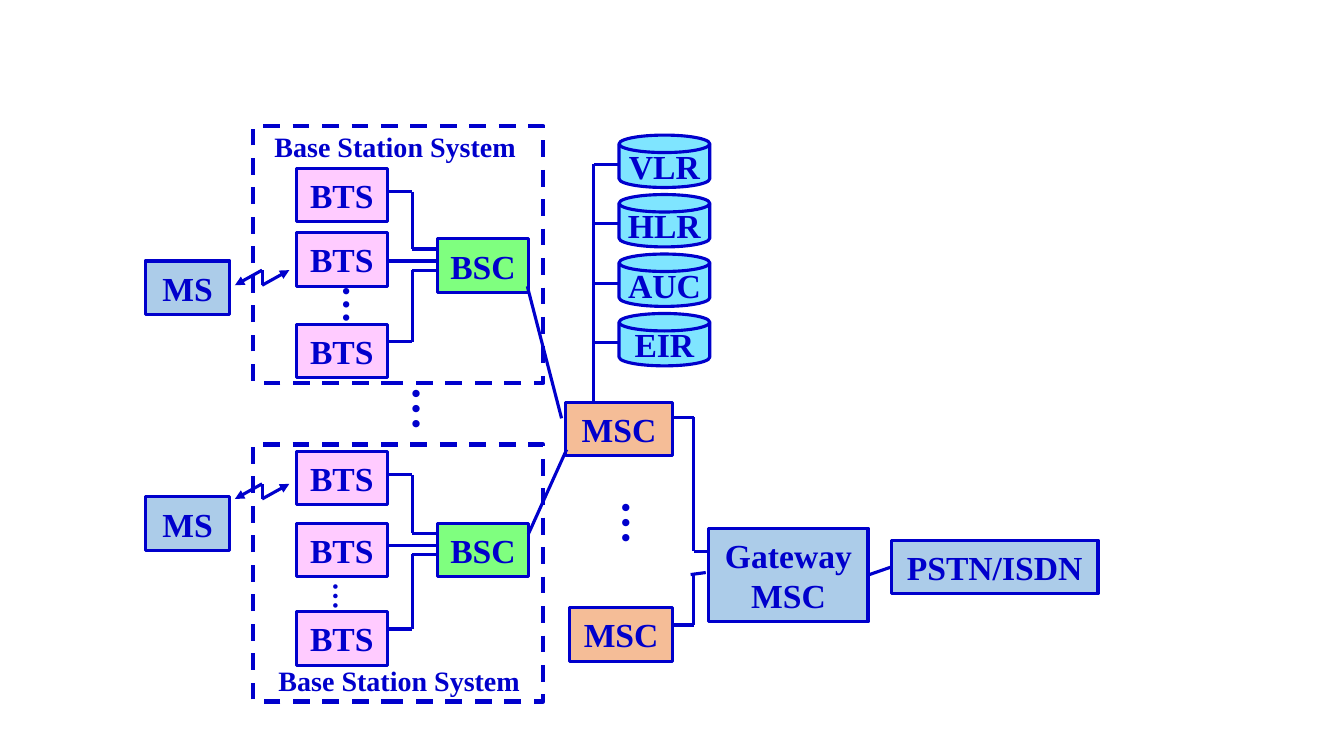
from itertools import pairwise

from lxml import etree
from pptx import Presentation
from pptx.dml.color import RGBColor
from pptx.enum.dml import MSO_LINE
from pptx.enum.shapes import MSO_CONNECTOR, MSO_SHAPE
from pptx.enum.text import MSO_ANCHOR, PP_ALIGN
from pptx.oxml.ns import qn
from pptx.util import Inches, Pt

RECT = MSO_SHAPE.RECTANGLE
DISK = MSO_SHAPE.FLOWCHART_MAGNETIC_DISK
STRAIGHT = MSO_CONNECTOR.STRAIGHT
DASH = MSO_LINE.DASH
MIDDLE = MSO_ANCHOR.MIDDLE
CENTER, LEFT = PP_ALIGN.CENTER, PP_ALIGN.LEFT

FONT = "Times New Roman"
COLORS = {
    "ink": "0000CC",
    "terminal": "5B9BD5",
    "bts": "FF99FF",
    "bsc": "00FF00",
    "msc": "ED7D31",
    "register": "00CCFF",
}
NODE_H = 0.53
BTS_W = 0.9


def color(name):
    return RGBColor.from_string(COLORS[name])


def write(shape, text, size=24, align=CENTER, wrap=True):
    frame = shape.text_frame
    frame.word_wrap = wrap
    frame.vertical_anchor = MIDDLE
    paragraph = frame.paragraphs[0]
    paragraph.alignment = align
    run = paragraph.add_run()
    run.text = text
    run.font.name = FONT
    run.font.size = Pt(size)
    run.font.bold = True
    run.font.color.rgb = color("ink")


def label(slide, text, left, top, width, height, rotation=0, **text_format):
    box = slide.shapes.add_textbox(*map(Inches, (left, top, width, height)))
    box.rotation = rotation
    write(box, text, **text_format)


def dots(slide, left, top, width, height, size):
    """Vertical ellipsis."""
    label(slide, "…", left, top, width, height, rotation=270, size=size, align=LEFT)


def outline(slide, left, top, width, height, kind=RECT, weight=2.25):
    shape = slide.shapes.add_shape(kind, *map(Inches, (left, top, width, height)))
    shape.shadow.inherit = False
    shape.fill.background()
    shape.line.color.rgb = color("ink")
    shape.line.width = Pt(weight)
    return shape


def node(slide, text, fill, left, top, width, height=NODE_H, kind=RECT, wrap=True):
    shape = outline(slide, left, top, width, height, kind)
    shape.fill.solid()
    shape.fill.fore_color.rgb = color(fill)
    tint = shape.element.spPr.find(qn("a:solidFill")).find(qn("a:srgbClr"))
    etree.SubElement(tint, qn("a:alpha"), val="50000")
    write(shape, text, wrap=wrap)
    return shape


def wire(shapes, *points, arrow=False):
    """Straight lines through the points; returns the last one."""
    for start, end in pairwise(points):
        line = shapes.add_connector(STRAIGHT, *map(Inches, (*start, *end)))
        line.line.color.rgb = color("ink")
        line.line.width = Pt(2.25)
        if arrow:
            etree.SubElement(line.line._get_or_add_ln(), qn("a:tailEnd"), type="triangle")
        etree.SubElement(line.element.spPr, qn("a:effectLst"))
    return line


def radio_link(slide, left, top, width=0.54, height=0.15):
    shapes = slide.shapes.add_group_shape().shapes
    middle, bottom = left + width / 2, top + height
    wire(shapes, (middle, bottom), (left + width, top), arrow=True)
    wire(shapes, (middle, bottom), (middle, top))
    wire(shapes, (middle, top), (left, bottom), arrow=True)


def base_station_system(slide, left, top, bts_tops, bsc_top, ms_top, radio_top,
                        title_at, middle_exit):
    """Dashed system with its mobile station; tops are measured from the frame."""
    outline(slide, left, top, 2.88, 2.55, weight=3).line.dash_style = DASH
    label(slide, "Base Station System", left + title_at[0], top + title_at[1],
          2.88, 0.43, size=20)

    # Stations wired to their controller
    bts_left, bsc_left, bend = left + 0.43, left + 1.83, left + 1.58
    bsc_y = top + bsc_top
    node(slide, "BSC", "bsc", bsc_left, bsc_y, 0.9)
    exits = (0.23, middle_exit, 0.17)
    entries = (0.1, 0.22, 0.31)
    for bts_top, exit_y, entry_y in zip(bts_tops, exits, entries):
        bts_y = top + bts_top
        node(slide, "BTS", "bts", bts_left, bts_y, BTS_W)
        start = (bts_left + BTS_W, bts_y + exit_y)
        end = (bsc_left, bsc_y + entry_y)
        if entry_y == entries[1]:
            wire(slide.shapes, start, end)
        else:
            wire(slide.shapes, start, (bend, start[1]), (bend, end[1]), end)

    # Mobile station
    node(slide, "MS", "terminal", left - 1.07, top + ms_top, 0.84)
    radio_link(slide, left - 0.18, top + radio_top)


def registers(slide, left, top, bus_bottom):
    """Database disks on a shared vertical bus."""
    bus, pitch, tap = left - 0.25, 0.59, 0.29
    wire(slide.shapes, (bus, bus_bottom), (bus, top + tap))
    for i, name in enumerate(("VLR", "HLR", "AUC", "EIR")):
        y = top + i * pitch
        node(slide, name, "register", left, y, 0.9, 0.52, kind=DISK, wrap=False)
        wire(slide.shapes, (bus, y + tap), (left, y + tap))


def switching(slide, left, top):
    """Switching centres, gateway and the fixed network."""
    node(slide, "MSC", "msc", left, top, 1.06)
    node(slide, "MSC", "msc", left + 0.04, top + 2.04, 1.02)
    dots(slide, left + 0.19, top + 0.94, 0.52, 0.63, size=32)
    gateway = node(slide, "Gateway MSC", "terminal", left + 1.42, top + 1.25, 1.58, 0.93)
    network = node(slide, "PSTN/ISDN", "terminal", left + 3.23, top + 1.37, 2.05)

    right, bend, gate = left + 1.06, left + 1.27, left + 1.42
    wire(slide.shapes, (right, top + 0.15), (bend, top + 0.15),
         (bend, top + 1.48), (gate, top + 1.48))
    wire(slide.shapes, (right, top + 2.21), (bend, top + 2.21), (bend, top + 1.7))
    wire(slide.shapes, (bend - 0.03, top + 1.71), (gate - 0.03, top + 1.69))
    trunk = wire(slide.shapes, (left + 3, top + 1.69), (left + 3.23, top + 1.67))
    trunk.begin_connect(gateway, 3)
    trunk.end_connect(network, 1)


def main():
    deck = Presentation()
    deck.slide_width, deck.slide_height = Inches(13.33), Inches(7.5)
    slide = deck.slides.add_slide(deck.slide_layouts[6])

    base_station_system(slide, 2.51, 1.25, bts_tops=(0.42, 1.06, 1.97), bsc_top=1.12,
                        ms_top=1.34, radio_top=1.43, title_at=(-0.03, -0.01),
                        middle_exit=0.28)
    base_station_system(slide, 2.51, 4.41, bts_tops=(0.07, 0.78, 1.66), bsc_top=0.78,
                        ms_top=0.52, radio_top=0.39, title_at=(0.01, 2.12),
                        middle_exit=0.22)
    dots(slide, 3.1, 2.83, 0.41, 0.57, size=28)
    dots(slide, 2.96, 5.66, 0.55, 0.43, size=20)
    dots(slide, 3.63, 3.71, 0.7, 0.63, size=32)

    registers(slide, 6.14, 1.34, bus_bottom=3.99)
    switching(slide, 5.61, 3.99)

    # Controllers to the switching centre
    wire(slide.shapes, (5.23, 2.84), (5.57, 4.15))
    wire(slide.shapes, (5.24, 5.3), (5.62, 4.46))

    deck.save("out.pptx")


if __name__ == "__main__":
    main()
